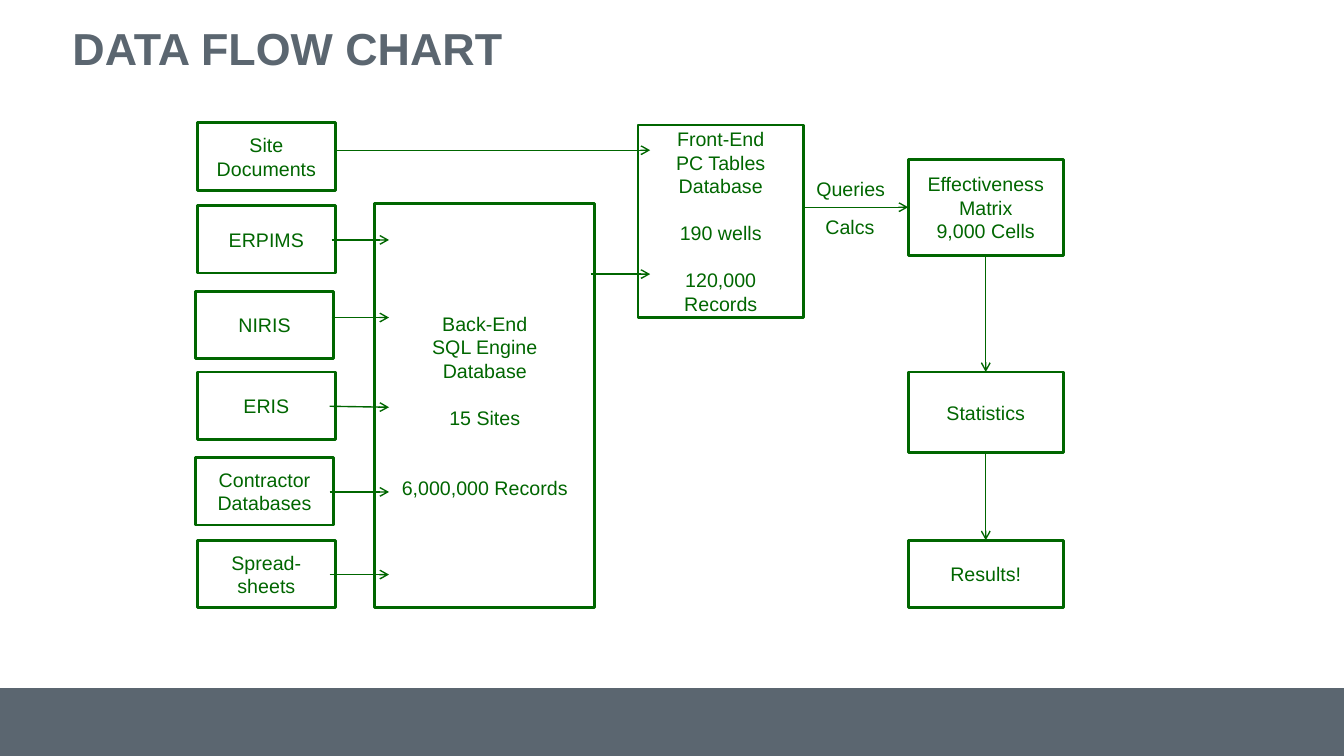
"""Build the data flow chart slide."""
import pptx
import pptx.dml.color
import pptx.enum.shapes
import pptx.enum.text
import pptx.oxml
import pptx.oxml.ns
import pptx.util

Pt = pptx.util.Pt
SHAPES = pptx.enum.shapes.MSO_SHAPE
ALIGN = pptx.enum.text.PP_ALIGN
ANCHOR = pptx.enum.text.MSO_ANCHOR
AUTO_SIZE = pptx.enum.text.MSO_AUTO_SIZE
GREEN = pptx.dml.color.RGBColor(0x00, 0x66, 0x00)
SLATE = pptx.dml.color.RGBColor(0x5B, 0x66, 0x70)
LINE_GAP = 16.8
BODY_FONT = {"name": "Arial", "size": Pt(14)}
TITLE_FONT = {"name": "Arial", "size": Pt(32), "bold": True}


def write_text(shape, lines, font, color, paragraph_format, frame_format):
    """Fill a shape with (text, blank lines before) pairs."""
    frame = shape.text_frame
    for name, value in frame_format.items():
        setattr(frame, name, value)
    for index, (text, gap) in enumerate(lines):
        paragraph = frame.add_paragraph() if index else frame.paragraphs[0]
        paragraph.text = text
        for name, value in paragraph_format.items():
            setattr(paragraph, name, value)
        if gap:
            paragraph.space_before = Pt(gap * LINE_GAP)
        for name, value in font.items():
            setattr(paragraph.font, name, value)
        paragraph.font.color.rgb = color


def add_arrow(shapes, left, top, right, bottom):
    """Draw a thin green arrow."""
    arrow = shapes.add_connector(
        pptx.enum.shapes.MSO_CONNECTOR.STRAIGHT, Pt(left), Pt(top), Pt(right), Pt(bottom))
    arrow.line.color.rgb = GREEN
    arrow.line.width = Pt(1)
    tail = pptx.oxml.parse_xml(f'<a:tailEnd {pptx.oxml.ns.nsdecls("a")} type="arrow"/>')
    arrow.line._get_or_add_ln().append(tail)
    effects = pptx.oxml.parse_xml(f'<a:effectLst {pptx.oxml.ns.nsdecls("a")}/>')
    arrow._element.spPr.append(effects)
    return arrow


presentation = pptx.Presentation()
presentation.slide_width = Pt(960)
presentation.slide_height = Pt(540)
slide = presentation.slides.add_slide(presentation.slide_layouts[6])
shapes = slide.shapes

footer = shapes.add_shape(SHAPES.RECTANGLE, Pt(0), Pt(491.5), Pt(960), Pt(48.5))
footer.shadow.inherit = False
footer.fill.solid()
footer.fill.fore_color.rgb = SLATE
footer.line.fill.background()

title = shapes.add_textbox(Pt(51.8), Pt(6.5), Pt(720), Pt(59.8))
write_text(title, [("DATA FLOW CHART", 0)], TITLE_FONT, SLATE, {"line_spacing": 0.9},
           {"word_wrap": True, "vertical_anchor": ANCHOR.MIDDLE, "margin_left": Pt(0)})

boxes = [
    ("site", 141, 87.8, 98.6, 48.2, [("Site Documents", 0)]),
    ("erpims", 141, 146.9, 98.6, 48.2, [("ERPIMS", 0)]),
    ("niris", 139.7, 208.1, 98.6, 48.2, [("NIRIS", 0)]),
    ("eris", 141, 265.7, 98.6, 48.2, [("ERIS", 0)]),
    ("contractor", 139.7, 326.9, 98.6, 48.2, [("Contractor Databases", 0)]),
    ("spreadsheets", 141, 385.9, 98.6, 48.2, [("Spread-sheets", 0)]),
    ("back end", 267.8, 145.4, 157, 288.7,
     [("Back-End", 0), ("SQL Engine", 0), ("Database", 0), ("15 Sites", 1),
      ("6,000,000 Records", 2)]),
    ("front end", 455.8, 89.3, 118.1, 137.5,
     [("Front-End", 0), ("PC Tables", 0), ("Database", 0), ("190 wells", 1),
      ("120,000 Records", 1)]),
    ("matrix", 648.7, 113.8, 110.9, 68.4,
     [("Effectiveness", 0), ("Matrix", 0), ("9,000 Cells", 0)]),
    ("statistics", 648.7, 265.7, 110.9, 57.6, [("Statistics", 0)]),
    ("results", 648.7, 385.9, 110.9, 48.2, [("Results!", 0)]),
]
nodes = {}
for name, left, top, width, height, lines in boxes:
    shape = shapes.add_shape(
        SHAPES.FLOWCHART_PROCESS, Pt(left), Pt(top), Pt(width), Pt(height))
    shape.shadow.inherit = False
    shape.fill.background()
    shape.line.color.rgb = GREEN
    shape.line.width = Pt(2)
    write_text(shape, lines, BODY_FONT, GREEN, {"alignment": ALIGN.CENTER},
               {"word_wrap": True, "vertical_anchor": ANCHOR.MIDDLE})
    nodes[name] = shape

for left, top, right, bottom in [
    (239.8, 107.3, 464.4, 107.3),
    (236.9, 171.4, 277.9, 171.4),
    (236.9, 226.8, 277.9, 226.8),
    (235.4, 290.2, 277.9, 290.9),
    (235.4, 351.4, 277.9, 351.4),
    (235.4, 410.4, 277.9, 410.4),
    (421.9, 195.8, 464.4, 195.8),
]:
    add_arrow(shapes, left, top, right, bottom)

add_arrow(shapes, 573.5, 148, 648.7, 148).end_connect(nodes["matrix"], 1)
for source, target in [("matrix", "statistics"), ("statistics", "results")]:
    arrow = add_arrow(shapes, 704.2, 182.2, 704.2, 265.7)
    arrow.begin_connect(nodes[source], 2)
    arrow.end_connect(nodes[target], 0)

for text, left, top, width in [("Queries", 576, 123.1, 72.7), ("Calcs", 582.5, 149.8, 61.2)]:
    label = shapes.add_textbox(Pt(left), Pt(top), Pt(width), Pt(24.5))
    write_text(label, [(text, 0)], BODY_FONT, GREEN, {"alignment": ALIGN.LEFT},
               {"word_wrap": True, "auto_size": AUTO_SIZE.SHAPE_TO_FIT_TEXT})

presentation.save("out.pptx")
